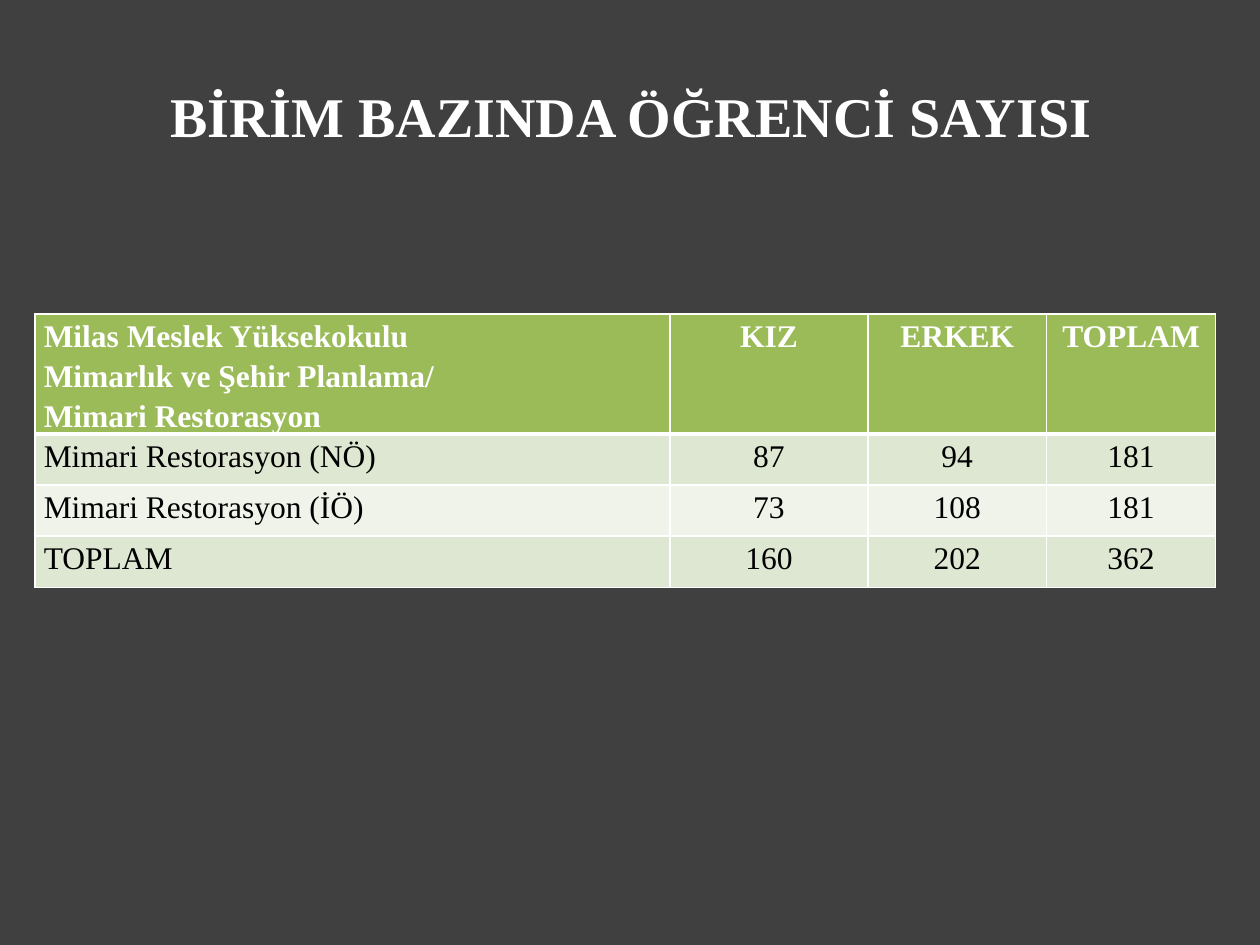
from dataclasses import dataclass

from lxml.etree import SubElement
from pptx import Presentation
from pptx.dml.color import RGBColor
from pptx.enum.text import MSO_ANCHOR, PP_ALIGN
from pptx.oxml.ns import qn
from pptx.util import Pt


@dataclass(frozen=True)
class Theme:
    font: str = "Times New Roman"
    title_size: int = 32
    table_size: int = 18
    background: str = "404040"
    light: str = "FFFFFF"
    dark: str = "000000"
    header: str = "9BBB59"
    bands: tuple = ("DEE7D1", "EFF3EA")


THEME = Theme()
TITLE = "BİRİM BAZINDA ÖĞRENCİ SAYISI"
COLUMN_WIDTHS = (362.9, 113, 102.2, 96.5)
HEADER_HEIGHT, ROW_HEIGHT = 68.5, 29.2
STUDENT_ROWS = (
    ("Milas Meslek Yüksekokulu\nMimarlık ve Şehir Planlama/\nMimari Restorasyon",
     "KIZ", "ERKEK", "TOPLAM"),
    ("Mimari Restorasyon (NÖ)", "87", "94", "181"),
    ("Mimari Restorasyon (İÖ)", "73", "108", "181"),
    ("TOPLAM", "160", "202", "362"),
)


def write_text(tf, text, *, size, color, bold=False, align=PP_ALIGN.LEFT, spacing=1.0):
    for i, line in enumerate(text.split("\n")):
        p = tf.add_paragraph() if i else tf.paragraphs[0]
        p.alignment = align
        p.line_spacing = spacing
        r = p.add_run()
        r.text = line
        r.font.name = THEME.font
        r.font.size = Pt(size)
        r.font.bold = bold
        r.font.color.rgb = RGBColor.from_string(color)


def add_title(s, text):
    sp = s.shapes.title
    sp.left, sp.top, sp.width, sp.height = Pt(36.7), Pt(43.2), Pt(648), Pt(90)
    tf = sp.text_frame
    tf.vertical_anchor = MSO_ANCHOR.MIDDLE
    tf.margin_bottom = Pt(48)
    write_text(tf, text, size=THEME.title_size, color=THEME.light, bold=True,
               align=PP_ALIGN.CENTER)


def set_borders(cell, **widths):
    tcPr = cell._tc.get_or_add_tcPr()
    for side in ("L", "R", "T", "B"):
        ln = SubElement(tcPr, qn(f"a:ln{side}"), w=str(Pt(widths.get(side, 1))))
        fill = SubElement(ln, qn("a:solidFill"))
        SubElement(fill, qn("a:srgbClr"), val=THEME.light)


def format_cell(cell, text, row, column):
    is_header = row == 0
    set_borders(cell, T=3 if row == 1 else 1, B=3 if is_header else 1)
    cell.fill.solid()
    fill = THEME.header if is_header else THEME.bands[(row - 1) % 2]
    cell.fill.fore_color.rgb = RGBColor.from_string(fill)
    cell.margin_left = cell.margin_right = Pt(5)
    cell.margin_top = cell.margin_bottom = Pt(0)
    write_text(cell.text_frame, text, size=THEME.table_size, bold=is_header,
               color=THEME.light if is_header else THEME.dark, spacing=1.15,
               align=PP_ALIGN.CENTER if column else PP_ALIGN.LEFT)


def add_student_table(s, rows):
    height = HEADER_HEIGHT + ROW_HEIGHT * (len(rows) - 1)
    table = s.shapes.add_table(len(rows), len(COLUMN_WIDTHS), Pt(20), Pt(179.3),
                               Pt(sum(COLUMN_WIDTHS)), Pt(height)).table
    for column, width in zip(table.columns, COLUMN_WIDTHS):
        column.width = Pt(width)
    for i, values in enumerate(rows):
        table.rows[i].height = Pt(ROW_HEIGHT if i else HEADER_HEIGHT)
        for j, text in enumerate(values):
            format_cell(table.cell(i, j), text, i, j)


def main():
    prs = Presentation()
    prs.slide_width, prs.slide_height = Pt(720), Pt(540)
    s = prs.slides.add_slide(prs.slide_layouts[5])
    s.background.fill.solid()
    s.background.fill.fore_color.rgb = RGBColor.from_string(THEME.background)
    add_title(s, TITLE)
    add_student_table(s, STUDENT_ROWS)
    prs.save("out.pptx")


if __name__ == "__main__":
    main()
